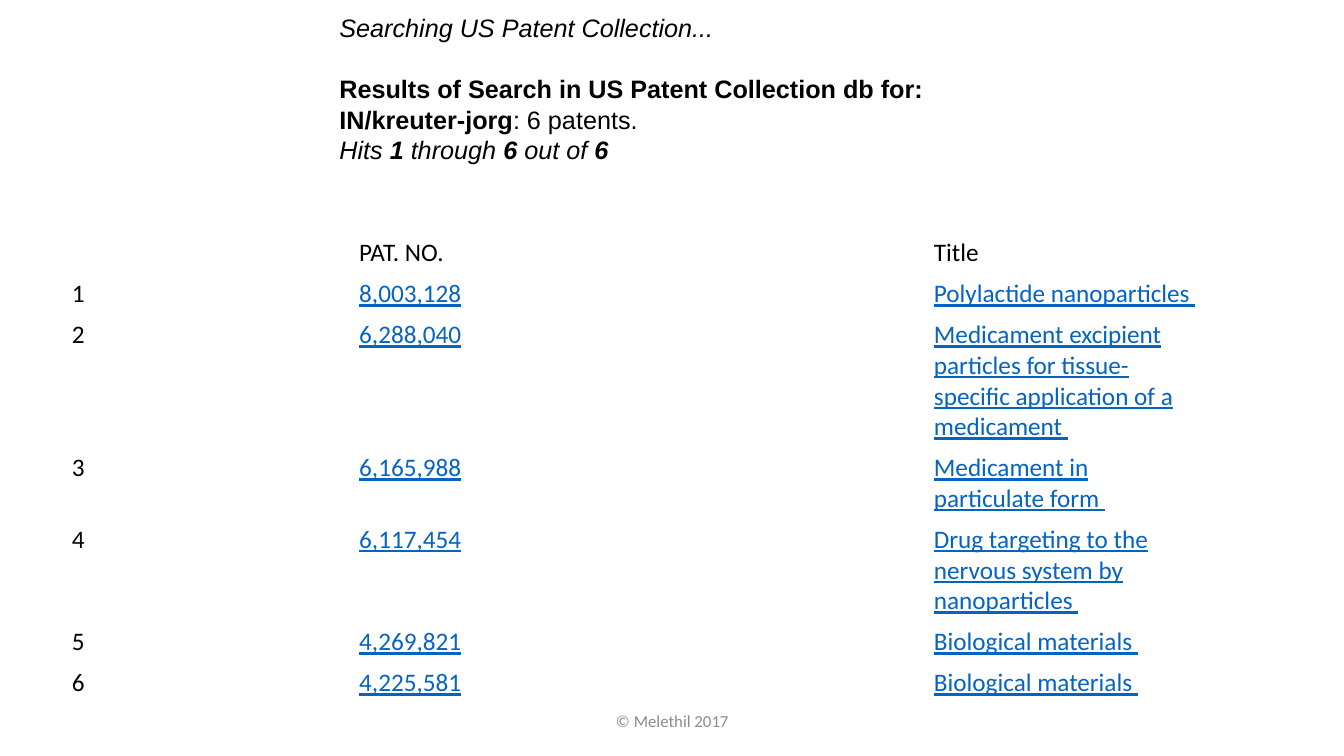
from pptx import Presentation
from pptx.dml.color import RGBColor
from pptx.enum.text import MSO_ANCHOR, MSO_AUTO_SIZE, PP_ALIGN
from pptx.util import Inches, Pt

SLIDE_WIDTH, SLIDE_HEIGHT = Inches(13.33), Inches(7.5)
BLACK, LINK_BLUE, GREY = "000000", "0563C1", "8C8C8C"

# Each line is a list of (text, bold, italic) pieces.
SEARCH_SUMMARY = [
    [("Searching US Patent Collection...", False, True)],
    [("Results of Search in US Patent Collection db for:", True, False)],
    [("IN/kreuter-jorg", True, False), (": 6 patents.", False, False)],
    [("Hits ", False, True), ("1", True, True), (" through ", False, True),
     ("6 ", True, True), ("out of ", False, True), ("6", True, True)],
]
PATENTS = [
    ("8,003,128", "Polylactide nanoparticles "),
    ("6,288,040", "Medicament excipient particles for tissue-specific "
                  "application of a medicament "),
    ("6,165,988", "Medicament in particulate form "),
    ("6,117,454", "Drug targeting to the nervous system by nanoparticles "),
    ("4,269,821", "Biological materials "),
    ("4,225,581", "Biological materials "),
]
COLUMN_WIDTH = Inches(2.85)
ROW_HEIGHTS = [0.38, 0.38, 1.24, 0.67, 0.96, 0.38, 0.38]


def share(across, down):
    """Turn shares of the slide's width and height into lengths."""
    return round(SLIDE_WIDTH * across), round(SLIDE_HEIGHT * down)


def format_font(font, name, size, color, bold=False, italic=False, underline=False):
    font.name, font.size = name, Pt(size)
    font.bold, font.italic, font.underline = bold, italic, underline
    font.color.rgb = RGBColor.from_string(color)


def add_search_summary(slide):
    summary = slide.shapes.title
    summary.left, summary.top = share(0.245, 0.01)
    summary.width, summary.height = share(0.73, 0.22)
    frame = summary.text_frame
    frame.word_wrap = True
    frame.auto_size = MSO_AUTO_SIZE.NONE
    frame.vertical_anchor = MSO_ANCHOR.TOP
    for index, pieces in enumerate(SEARCH_SUMMARY):
        line = frame.add_paragraph() if index else frame.paragraphs[0]
        line.alignment = PP_ALIGN.LEFT
        line.line_spacing = 1.0
        line.space_before = Pt(22 if index == 1 else 0)
        for text, bold, italic in pieces:
            piece = line.add_run()
            piece.text = text
            format_font(piece.font, "Arial", 18, BLACK, bold, italic)


def fill_cell(cell, text, is_header, is_link):
    cell.fill.background()
    cell.vertical_anchor = MSO_ANCHOR.MIDDLE if is_header else MSO_ANCHOR.TOP
    cell.text_frame.text = text
    paragraph = cell.text_frame.paragraphs[0]
    format_font(paragraph.font, "Calibri", 18, BLACK)
    for run in paragraph.runs:
        format_font(run.font, "Calibri", 18, LINK_BLUE if is_link else BLACK,
                    underline=is_link)


def add_patent_table(slide):
    rows = [("", "PAT. NO.", "", "Title")]
    rows += [(str(hit), number, "", title)
             for hit, (number, title) in enumerate(PATENTS, start=1)]
    columns = len(rows[0])
    patents = slide.shapes.add_table(
        len(rows), columns, *share(0.046, 0.308),
        COLUMN_WIDTH * columns, Inches(sum(ROW_HEIGHTS))).table
    patents.first_row = patents.horz_banding = False
    for column in patents.columns:
        column.width = COLUMN_WIDTH
    for row, height in zip(patents.rows, ROW_HEIGHTS):
        row.height = Inches(height)
    for r, texts in enumerate(rows):
        for c, text in enumerate(texts):
            fill_cell(patents.cell(r, c), text, is_header=r == 0,
                      is_link=r > 0 and c > 0)


def add_copyright(slide):
    notice = slide.shapes.add_textbox(*share(0.3315, 0.927), *share(0.3375, 0.053))
    frame = notice.text_frame
    frame.word_wrap = True
    frame.vertical_anchor = MSO_ANCHOR.MIDDLE
    frame.text = "© Melethil 2017"
    line = frame.paragraphs[0]
    line.alignment = PP_ALIGN.CENTER
    format_font(line.runs[0].font, "Calibri", 12, GREY)


def main():
    presentation = Presentation()
    presentation.slide_width, presentation.slide_height = SLIDE_WIDTH, SLIDE_HEIGHT
    title_only = presentation.slide_layouts.get_by_name("Title Only")
    slide = presentation.slides.add_slide(title_only)
    add_search_summary(slide)
    add_patent_table(slide)
    add_copyright(slide)
    presentation.save("out.pptx")


if __name__ == "__main__":
    main()
